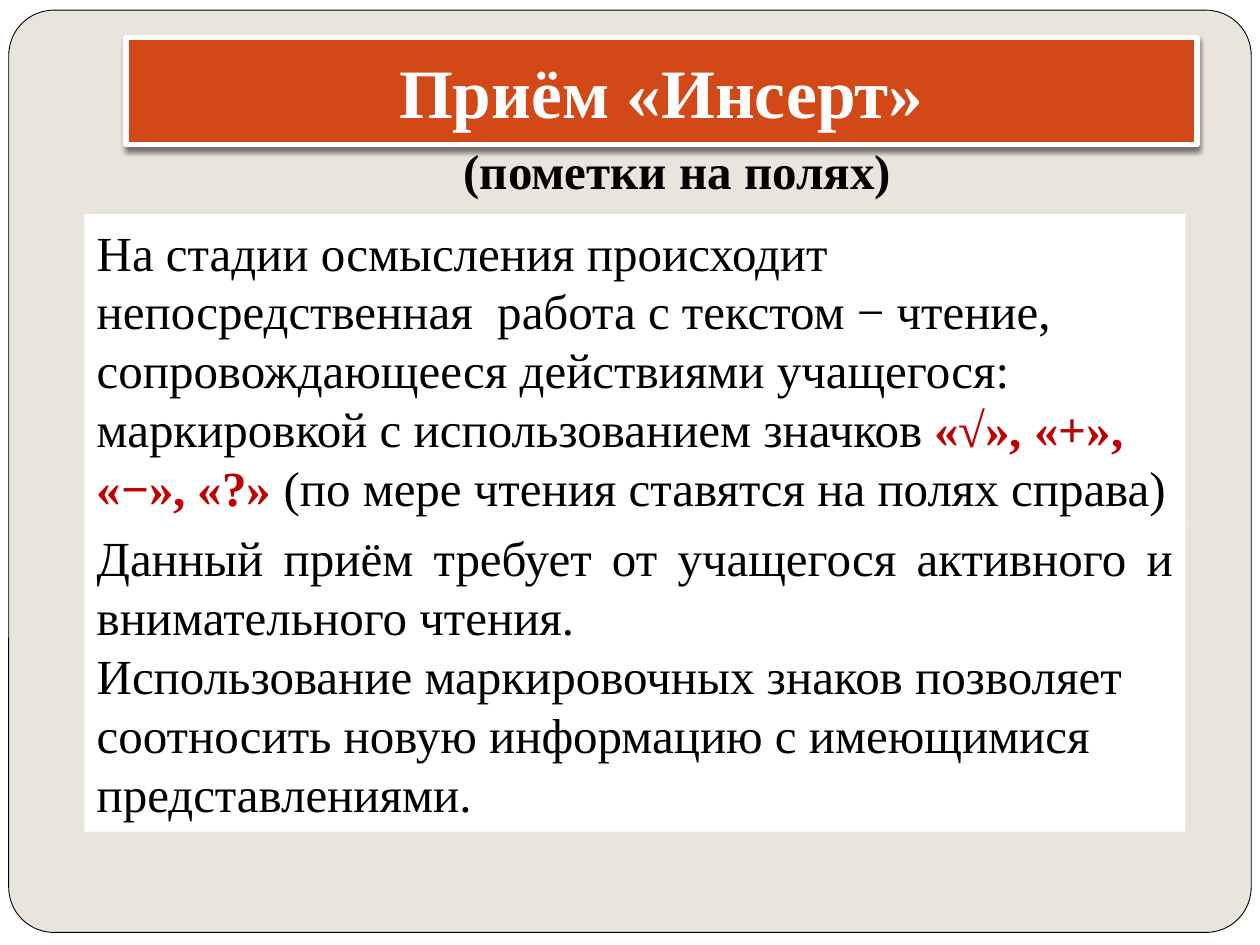
from dataclasses import dataclass

from lxml.etree import SubElement
from pptx import Presentation
from pptx.dml.color import RGBColor
from pptx.enum.shapes import MSO_SHAPE as Preset
from pptx.enum.text import MSO_ANCHOR as Anchor, PP_ALIGN as Align
from pptx.oxml.ns import qn
from pptx.util import Pt

COLORS = {
    "page": "E9E5DC",
    "accent": "D34817",
    "white": "FFFFFF",
    "black": "000000",
    "marks": "C00000",
}
FONT = "Times New Roman"


@dataclass
class Span:
    text: str
    color: str = "black"
    bold: bool = False
    size: float = 28


@dataclass
class Para:
    spans: list[Span]
    align: Align = Align.LEFT


@dataclass
class Panel:
    top: float
    anchor: Anchor
    paras: list[Para]


PANELS = [
    Panel(122.4, Anchor.MIDDLE, [
        Para([Span("На стадии осмысления происходит")], Align.JUSTIFY),
        Para([Span("непосредственная  работа с текстом − чтение, ")], Align.JUSTIFY),
        Para([
            Span("сопровождающееся действиями учащегося: "
                 "маркировкой с использованием значков "),
            Span("«√», «+», «−», «?» ", color="marks", bold=True),
            Span("(по мере чтения ставятся на полях справа)"),
        ]),
    ]),
    Panel(298.08, Anchor.TOP, [
        Para([Span("Данный приём требует от учащегося активного "
                   "и внимательного чтения.")], Align.JUSTIFY),
        Para([Span("Использование маркировочных знаков позволяет соотносить "
                   "новую информацию с имеющимися представлениями.")]),
    ]),
]


def rgb(name: str) -> RGBColor:
    return RGBColor.from_string(COLORS[name])


def add_box(page, preset, left: float, top: float, width: float, height: float,
            fill: str, line: str | None = None, line_width: float = 0):
    box = page.shapes.add_shape(preset, Pt(left), Pt(top), Pt(width), Pt(height))
    box.shadow.inherit = False
    box.fill.solid()
    box.fill.fore_color.rgb = rgb(fill)
    if line:
        box.line.color.rgb = rgb(line)
        box.line.width = Pt(line_width)
    else:
        box.line.fill.background()
    return box


def write_text(box, paras: list[Para], anchor: Anchor = Anchor.TOP,
               bottom_inset: float = 3.6) -> None:
    frame = box.text_frame
    frame.word_wrap = True
    frame.vertical_anchor = anchor
    frame.margin_bottom = Pt(bottom_inset)
    for index, content in enumerate(paras):
        para = frame.paragraphs[0] if index == 0 else frame.add_paragraph()
        para.alignment = content.align
        for span in content.spans:
            run = para.add_run()
            run.text = span.text
            run.font.name = FONT
            run.font.size = Pt(span.size)
            run.font.bold = span.bold
            run.font.color.rgb = rgb(span.color)


def add_shadow(box, blur: float, distance: float, opacity: int) -> None:
    """Cast a black shadow straight down from the box."""
    effects = box._element.spPr.find(qn("a:effectLst"))
    shadow = SubElement(effects, qn("a:outerShdw"), blurRad=str(Pt(blur)),
                        dist=str(Pt(distance)), dir="5400000", rotWithShape="0")
    color = SubElement(shadow, qn("a:srgbClr"), val=COLORS["black"])
    SubElement(color, qn("a:alpha"), val=str(opacity * 1000))


def main() -> None:
    deck = Presentation()
    deck.slide_width, deck.slide_height = Pt(720), Pt(540)
    page = deck.slides.add_slide(deck.slide_layouts[6])
    page.background.fill.solid()
    page.background.fill.fore_color.rgb = rgb("white")

    frame = add_box(page, Preset.ROUNDED_RECTANGLE, 5, 5.8, 710, 527,
                    "page", "black", 0.5)
    frame.adjustments[0] = 0.049

    title = add_box(page, Preset.RECTANGLE, 72, 21.6, 612, 61.2,
                    "accent", "white", 3)
    add_shadow(title, blur=3, distance=2, opacity=50)
    title_span = Span("Приём «Инсерт»", color="white", bold=True, size=39.6)
    write_text(title, [Para([title_span], Align.CENTER)], Anchor.BOTTOM,
               bottom_inset=7.2)

    subtitle = page.shapes.add_textbox(Pt(257.8), Pt(77), Pt(272.2), Pt(74.9))
    write_text(subtitle, [Para([Span("(пометки на полях)", bold=True)])])

    for panel in PANELS:
        box = add_box(page, Preset.RECTANGLE, 48.2, panel.top, 629.3, 177.1, "white")
        write_text(box, panel.paras, panel.anchor)

    deck.save("out.pptx")


if __name__ == "__main__":
    main()
